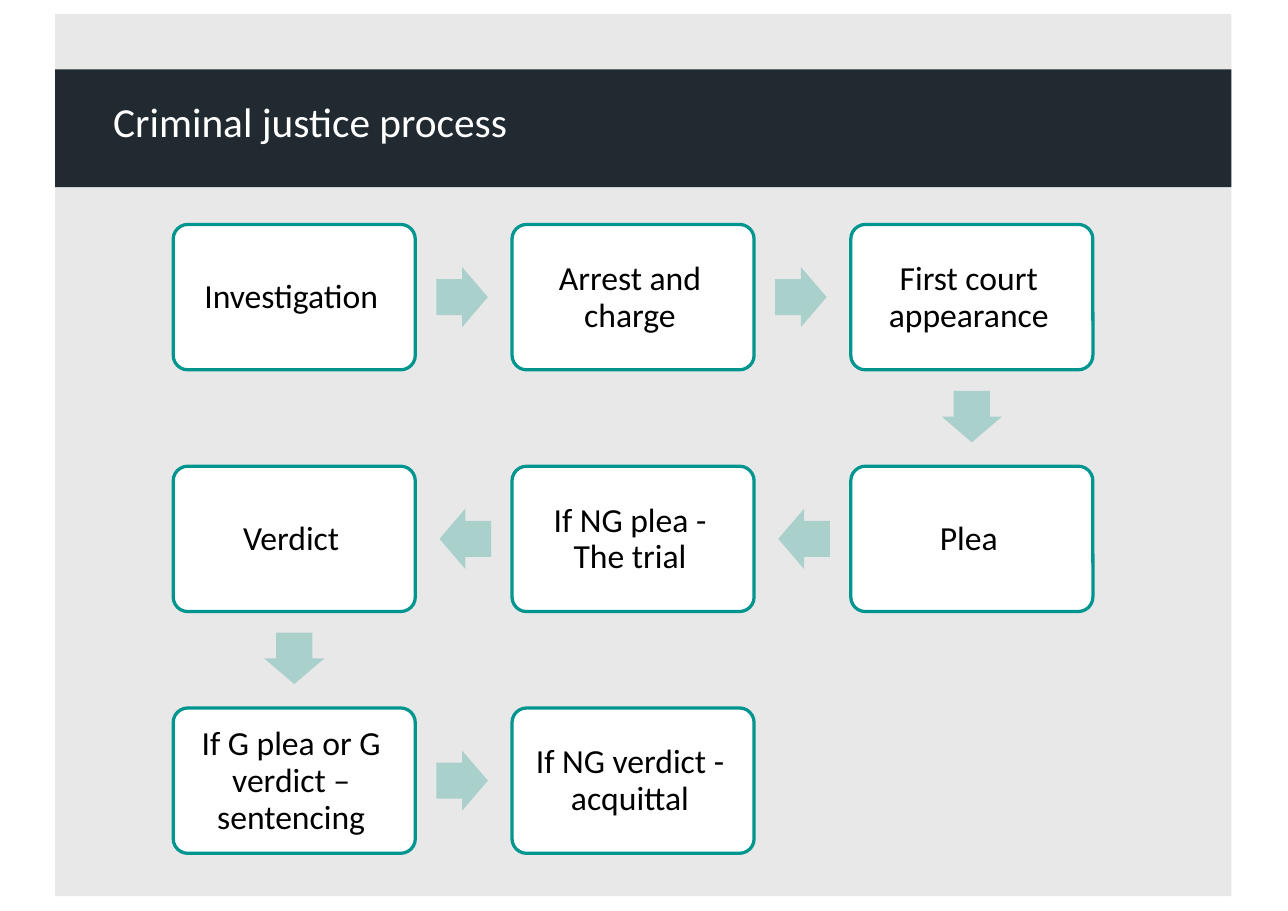
"""Build the criminal justice process slide as a winding flow of steps."""
from dataclasses import dataclass

from pptx import Presentation
from pptx.dml.color import RGBColor
from pptx.enum.shapes import MSO_SHAPE as Preset
from pptx.enum.text import MSO_ANCHOR as Anchor, PP_ALIGN as Align
from pptx.shapes.autoshape import Shape
from pptx.slide import Slide
from pptx.util import Pt

FONT = "Calibri"
PANEL, BAND, TEAL, PALE_TEAL = "E8E8E9", "202A30", "00968F", "AAD0CC"
WHITE, BLACK = "FFFFFF", "000000"
COLUMNS = 3
LEFT, TOP = 113.2, 146.7
COLUMN_PITCH, ROW_PITCH = 221.4, 158
BOX_WIDTH, BOX_HEIGHT = 158.2, 95
ARROW_GAP, ARROW_LENGTH, ARROW_BREADTH = 13.7, 33.7, 39.4
ARROWS = {
    (1, 0): Preset.RIGHT_ARROW,
    (-1, 0): Preset.LEFT_ARROW,
    (0, 1): Preset.DOWN_ARROW,
}
LABELS = [
    "Investigation",
    "Arrest and charge",
    "First court appearance",
    "Plea",
    "If NG plea - The trial",
    "Verdict",
    "If G plea or G verdict – sentencing",
    "If NG verdict - acquittal",
]


@dataclass(frozen=True)
class Step:
    label: str
    column: int
    row: int

    @property
    def left(self) -> float:
        return LEFT + self.column * COLUMN_PITCH

    @property
    def top(self) -> float:
        return TOP + self.row * ROW_PITCH


def color(value: str) -> RGBColor:
    return RGBColor.from_string(value)


def winding_steps(labels: list[str]) -> list[Step]:
    steps = []
    for index, label in enumerate(labels):
        row, place = divmod(index, COLUMNS)
        column = COLUMNS - 1 - place if row % 2 else place
        steps.append(Step(label, column, row))
    return steps


def add_filled(slide: Slide, preset: Preset, left: float, top: float,
               width: float, height: float, fill: str) -> Shape:
    shape = slide.shapes.add_shape(preset, Pt(left), Pt(top), Pt(width), Pt(height))
    shape.shadow.inherit = False
    shape.fill.solid()
    shape.fill.fore_color.rgb = color(fill)
    shape.line.fill.background()
    return shape


def write(shape: Shape, text: str, size: float, ink: str, align: Align,
          margins: tuple[float, float, float, float]) -> None:
    frame = shape.text_frame
    frame.text = text
    frame.word_wrap = True
    frame.vertical_anchor = Anchor.MIDDLE
    (frame.margin_left, frame.margin_top,
     frame.margin_right, frame.margin_bottom) = map(Pt, margins)
    paragraph = frame.paragraphs[0]
    paragraph.alignment = align
    font = paragraph.runs[0].font
    font.name = FONT
    font.size = Pt(size)
    font.color.rgb = color(ink)


def add_step(slide: Slide, step: Step) -> None:
    box = add_filled(slide, Preset.ROUNDED_RECTANGLE, step.left, step.top,
                     BOX_WIDTH, BOX_HEIGHT, WHITE)
    box.adjustments[0] = 0.1
    box.line.color.rgb = color(TEAL)
    box.line.width = Pt(2.14)
    write(box, step.label, 22, BLACK, Align.CENTER, (12, 0, 16, 0))
    box.text_frame.paragraphs[0].line_spacing = Pt(24)


def add_arrow(slide: Slide, start: Step, end: Step) -> None:
    across, down = end.column - start.column, end.row - start.row
    reach = ARROW_GAP + ARROW_LENGTH / 2
    center_x = start.left + BOX_WIDTH / 2 + across * (BOX_WIDTH / 2 + reach)
    center_y = start.top + BOX_HEIGHT / 2 + down * (BOX_HEIGHT / 2 + reach)
    width, height = ARROW_LENGTH, ARROW_BREADTH
    if down:
        width, height = height, width
    arrow = add_filled(slide, ARROWS[across, down], center_x - width / 2,
                       center_y - height / 2, width, height, PALE_TEAL)
    arrow.adjustments[0] = 0.6
    arrow.adjustments[1] = 0.5


def main() -> None:
    presentation = Presentation()
    presentation.slide_width = Pt(841.7)
    presentation.slide_height = Pt(595.4)
    slide = presentation.slides.add_slide(presentation.slide_layouts[6])

    add_filled(slide, Preset.RECTANGLE, 36, 9, 768.8, 576.7, PANEL)
    band = add_filled(slide, Preset.RECTANGLE, 36, 45.3, 768.8, 77, BAND)
    write(band, "Criminal justice process", 27, WHITE, Align.LEFT, (38, 0, 0, 9))

    steps = winding_steps(LABELS)
    for step in steps:
        add_step(slide, step)
    for start, end in zip(steps, steps[1:]):
        add_arrow(slide, start, end)

    presentation.save("out.pptx")


if __name__ == "__main__":
    main()
